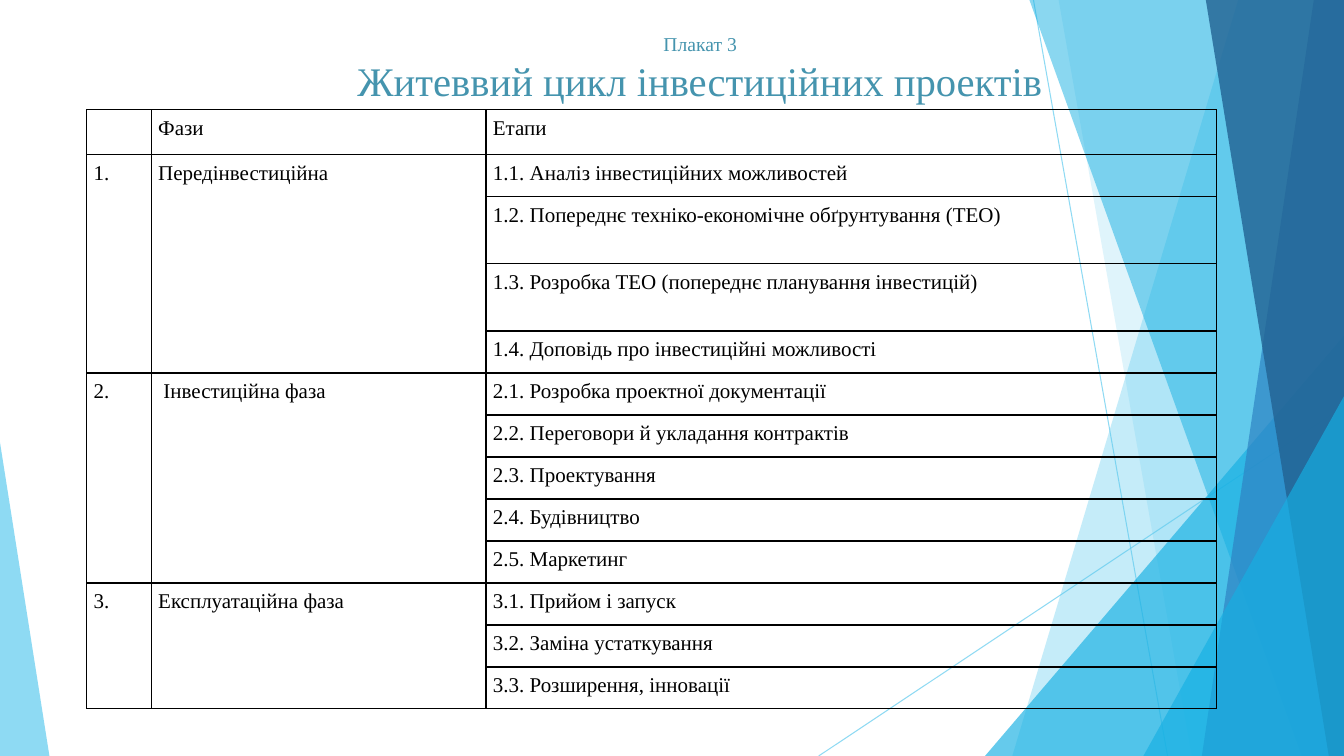
from lxml.etree import SubElement
from pptx import Presentation
from pptx.dml.color import RGBColor
from pptx.enum.shapes import MSO_CONNECTOR, MSO_SHAPE
from pptx.enum.text import MSO_AUTO_SIZE, PP_ALIGN
from pptx.oxml import parse_xml
from pptx.oxml.ns import nsdecls, qn
from pptx.util import Inches, Pt

FONT = "Times New Roman"
COLORS = {
    "sky": "5FCBEF", "cyan": "16B0E3", "blue": "2E83C3", "navy": "226292",
    "title": "4594AE", "text": "000000", "border": "000000",
}
TITLE = [("Плакат 3", 14), ("Житеввий цикл інвестиційних проектів", 29)]
HEADER = ["", "Фази", "Етапи"]
PHASES = [
    ("1.", "Передінвестиційна", [
        "1.1. Аналіз інвестиційних можливостей",
        "1.2. Попереднє техніко-економічне обґрунтування (ТЕО)",
        "1.3. Розробка ТЕО (попереднє планування інвестицій)",
        "1.4. Доповідь про інвестиційні можливості",
    ]),
    ("2.", " Інвестиційна фаза", [
        "2.1. Розробка проектної документації",
        "2.2. Переговори й укладання контрактів",
        "2.3. Проектування",
        "2.4. Будівництво",
        "2.5. Маркетинг",
    ]),
    ("3.", "Експлуатаційна фаза", [
        "3.1. Прийом і запуск",
        "3.2. Заміна устаткування",
        "3.3. Розширення, інновації",
    ]),
]
COLUMN_WIDTHS = [0.64, 3.32, 7.25]
HEADER_HEIGHT, ROW_HEIGHT, TALL_HEIGHT = Pt(32), Pt(30), Pt(48)
TALL_ROWS = (2, 3)

WIDTH, HEIGHT = 13.33, 7.5
RAYS = [((10.25, 0), (11.58, HEIGHT)), ((WIDTH, 4.03), (8.12, HEIGHT))]
FACETS = [
    ("band", (12.28, 10.04), "sky", 36),
    ("band", (10.5, 11.82), "sky", 20),
    ("triangle", (9.77, 3.33, 3.56, 4.17, 1), "cyan", 66),
    ("band", (10.21, 12.91), "cyan", 50),
    ("band", (13.03, 11.92), "blue", 70),
    ("band", (11.96, 13.18), "navy", 80),
    ("triangle", (11.34, 3.93, 1.99, 3.57, 1), "cyan", 66),
    ("triangle", (0, 4.39, 0.49, 3.11, 0), "sky", 70),
]


def color(name):
    return RGBColor.from_string(COLORS[name])


def set_opacity(owner, percent):
    tone = next(owner.iter(qn("a:srgbClr")))
    SubElement(tone, qn("a:alpha")).set("val", str(percent * 1000))


def add_ray(page, start, end):
    ray = page.shapes.add_connector(
        MSO_CONNECTOR.STRAIGHT, *[Inches(value) for value in start + end])
    ray.line.color.rgb = color("sky")
    ray.line.width = Pt(0.75)
    properties = ray._element.spPr
    set_opacity(properties, 70)
    SubElement(properties, qn("a:effectLst"))


def add_facet(page, kind, geometry, tone, opacity):
    if kind == "band":
        top_left, bottom_left = geometry
        corners = [(WIDTH, 0), (WIDTH, HEIGHT), (bottom_left, HEIGHT)]
        builder = page.shapes.build_freeform(Inches(top_left), 0)
        builder.add_line_segments([(Inches(x), Inches(y)) for x, y in corners])
        facet = builder.convert_to_shape()
    else:
        *frame, apex = geometry
        facet = page.shapes.add_shape(
            MSO_SHAPE.ISOSCELES_TRIANGLE, *[Inches(value) for value in frame])
        facet.adjustments[0] = apex
    facet.shadow.inherit = False
    facet.fill.solid()
    facet.fill.fore_color.rgb = color(tone)
    facet.line.fill.background()
    set_opacity(facet._element.spPr, opacity)


def add_title(page):
    box = page.shapes.add_textbox(Inches(1.09), Inches(0.27), Inches(11.21), Inches(0.82))
    frame = box.text_frame
    frame.word_wrap = True
    frame.auto_size = MSO_AUTO_SIZE.SHAPE_TO_FIT_TEXT
    for index, (text, size) in enumerate(TITLE):
        para = frame.add_paragraph() if index else frame.paragraphs[0]
        para.text = text
        para.alignment = PP_ALIGN.CENTER
        para.font.name = FONT
        para.font.size = Pt(size)
        para.font.color.rgb = color("title")
        para._p.get_or_add_pPr().set("indent", str(Inches(0.5)))


def format_cell(cell):
    cell.fill.background()
    cell.margin_left = cell.margin_right = Inches(0.07)
    cell.margin_top = cell.margin_bottom = Inches(0.07)
    para = cell.text_frame.paragraphs[0]
    para.alignment = PP_ALIGN.JUSTIFY
    para.font.name = FONT
    para.font.size = Pt(15)
    para.font.color.rgb = color("text")
    properties = cell._tc.get_or_add_tcPr()
    for index, side in enumerate(("lnL", "lnR", "lnT", "lnB")):
        properties.insert(index, parse_xml(
            f'<a:{side} {nsdecls("a")} w="{Pt(1)}"><a:solidFill>'
            f'<a:srgbClr val="{COLORS["border"]}"/></a:solidFill></a:{side}>'))


def add_phase_table(page):
    row_count = 1 + sum(len(stages) for _, _, stages in PHASES)
    heights = [HEADER_HEIGHT] + [
        TALL_HEIGHT if row in TALL_ROWS else ROW_HEIGHT for row in range(1, row_count)]
    table = page.shapes.add_table(
        row_count, len(HEADER), Inches(0.86), Inches(1.09),
        Inches(sum(COLUMN_WIDTHS)), sum(heights)).table
    table.first_row = table.horz_banding = False
    for column, width in zip(table.columns, COLUMN_WIDTHS):
        column.width = Inches(width)
    for row, height in zip(table.rows, heights):
        row.height = height
    for column, text in enumerate(HEADER):
        table.cell(0, column).text = text
    first = 1
    for number, phase, stages in PHASES:
        last = first + len(stages) - 1
        for column, text in enumerate((number, phase)):
            table.cell(first, column).text = text
            table.cell(first, column).merge(table.cell(last, column))
        for row, stage in enumerate(stages, first):
            table.cell(row, 2).text = stage
        first = last + 1
    for cell in table.iter_cells():
        format_cell(cell)


def main():
    deck = Presentation()
    deck.slide_width, deck.slide_height = Inches(WIDTH), Inches(HEIGHT)
    page = deck.slides.add_slide(deck.slide_layouts[6])
    for start, end in RAYS:
        add_ray(page, start, end)
    for facet in FACETS:
        add_facet(page, *facet)
    add_title(page)
    add_phase_table(page)
    deck.save("out.pptx")


if __name__ == "__main__":
    main()
